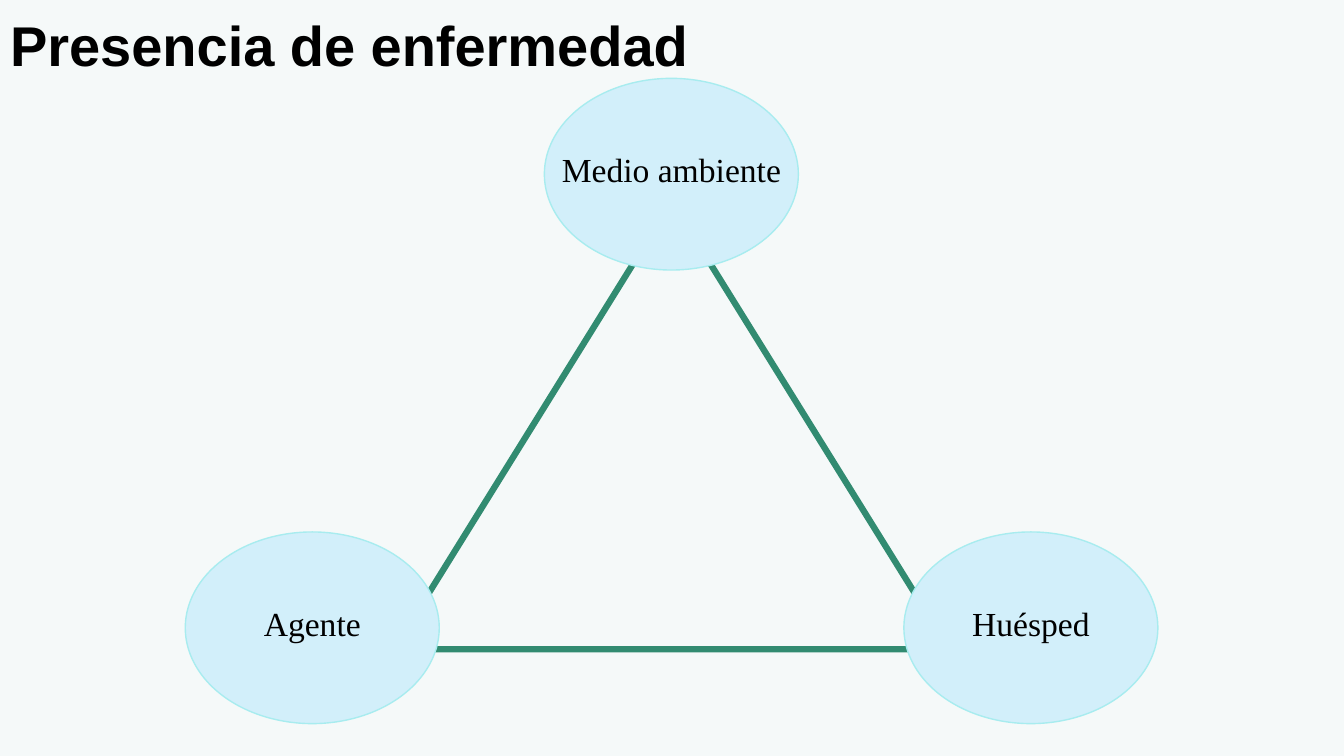
"""Builds the slide of the epidemiological triad of disease."""
from dataclasses import dataclass

from pptx import Presentation
from pptx.dml.color import RGBColor as Rgb
from pptx.enum.shapes import MSO_SHAPE as Kind
from pptx.enum.text import MSO_ANCHOR as Anchor, MSO_AUTO_SIZE as Fit, PP_ALIGN as Align
from pptx.shapes.autoshape import Shape
from pptx.slide import Slide
from pptx.util import Cm, Pt


@dataclass(frozen=True)
class Theme:
    """Colours, fonts and type sizes."""
    back: Rgb = Rgb.from_string("F5F9F9")
    ink: Rgb = Rgb.from_string("000000")
    edge: Rgb = Rgb.from_string("328B71")
    fill: Rgb = Rgb.from_string("D2EFFA")
    rim: Rgb = Rgb.from_string("A8ECEF")
    head: str = "Arial"
    body: str = "Times New Roman"
    large: Pt = Pt(40)
    small: Pt = Pt(24)


@dataclass(frozen=True)
class Node:
    """A corner of the triad, by its centre and label width in cm."""
    label: str
    x: float
    y: float
    width: float = 5.59


THEME = Theme()
WIDE, HIGH = 6.4, 4.83
ROW = 1.27
LIFT = 0.12
NODES = [
    Node("Huésped", 25.98, 15.82),
    Node("Agente", 7.87, 15.82),
    Node("Medio ambiente", 16.92, 4.39, 7.09),
]


def write(shape: Shape, text: str, font: str, size: Pt, align: Align, bold: bool) -> None:
    """Put one styled line of text in a shape."""
    frame = shape.text_frame
    frame.text = text
    frame.word_wrap = True
    frame.auto_size = Fit.SHAPE_TO_FIT_TEXT
    frame.vertical_anchor = Anchor.TOP
    line = frame.paragraphs[0]
    line.alignment = align
    line.font.name, line.font.size, line.font.bold = font, size, bold
    line.font.color.rgb = THEME.ink


def add_title(slide: Slide, text: str) -> None:
    """Move and fill the title placeholder."""
    title = slide.shapes.title
    title.left, title.top = Cm(0), Cm(0.15)
    title.width, title.height = Cm(18.47), Cm(1.96)
    write(title, text, THEME.head, THEME.large, Align.LEFT, True)


def add_links(slide: Slide) -> None:
    """Draw the triangle that links the corners."""
    links = slide.shapes.add_shape(Kind.ISOSCELES_TRIANGLE, Cm(9.93), Cm(5.08), Cm(14), Cm(11.28))
    links.shadow.inherit = False
    links.fill.background()
    links.line.color.rgb, links.line.width = THEME.edge, Pt(4.5)


def add_oval(slide: Slide, node: Node) -> None:
    """Draw the oval of a corner."""
    oval = slide.shapes.add_shape(
        Kind.OVAL, Cm(node.x - WIDE / 2), Cm(node.y - HIGH / 2), Cm(WIDE), Cm(HIGH))
    oval.shadow.inherit = False
    oval.fill.solid()
    oval.fill.fore_color.rgb = THEME.fill
    oval.line.color.rgb, oval.line.width = THEME.rim, Pt(1)


def add_label(slide: Slide, node: Node) -> None:
    """Write the label over the oval of a corner."""
    box = slide.shapes.add_textbox(
        Cm(node.x - node.width / 2), Cm(node.y - LIFT - ROW / 2), Cm(node.width), Cm(ROW))
    write(box, node.label, THEME.body, THEME.small, Align.CENTER, False)


def main() -> None:
    """Build and save the slide."""
    deck = Presentation()
    deck.slide_width, deck.slide_height = Cm(33.87), Cm(19.05)
    slide = deck.slides.add_slide(deck.slide_layouts[5])
    slide.background.fill.solid()
    slide.background.fill.fore_color.rgb = THEME.back
    add_title(slide, "Presencia de enfermedad")
    add_links(slide)
    for draw in (add_oval, add_label):
        for node in NODES:
            draw(slide, node)
    deck.save("out.pptx")


if __name__ == "__main__":
    main()
